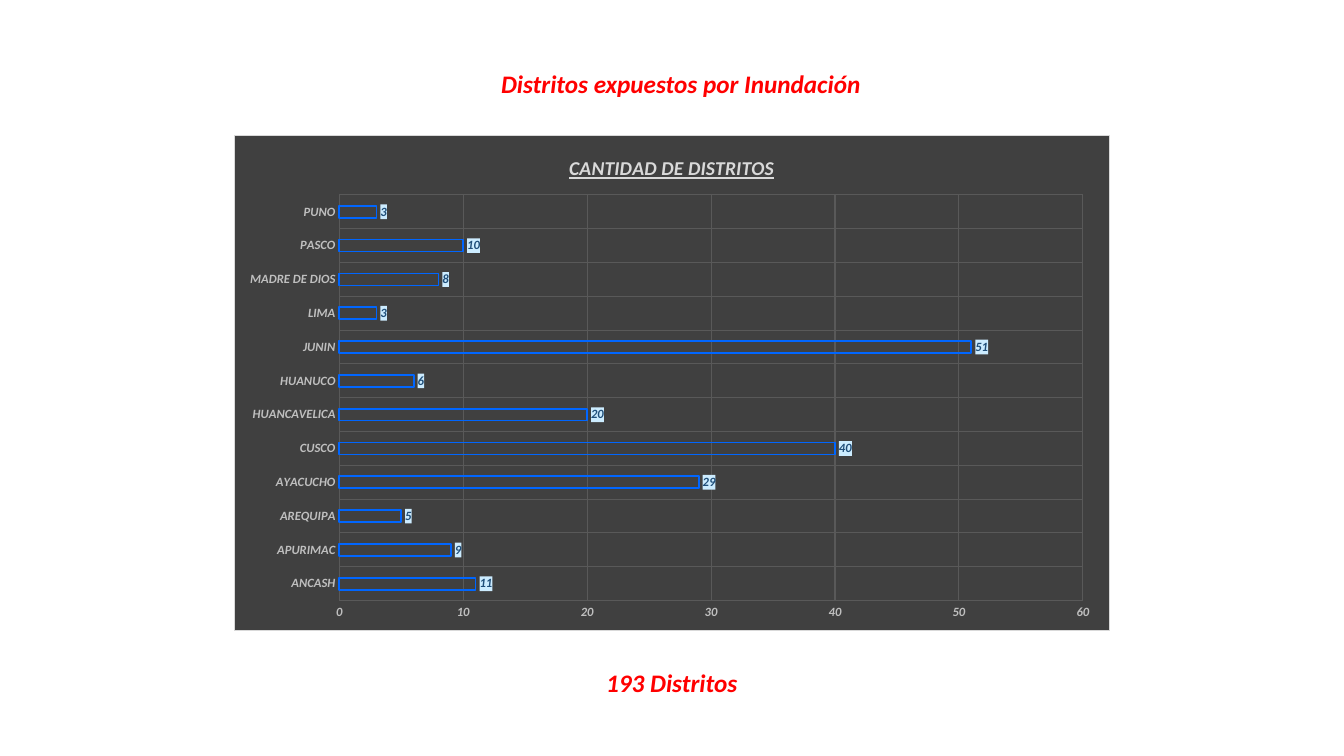
from lxml import etree
from pptx import Presentation
from pptx import util as u
from pptx.chart.data import CategoryChartData
from pptx.dml.color import RGBColor
from pptx.enum import chart as ch, text
from pptx.oxml.ns import qn

COLORS = {"heading": "FF0000", "panel": "404040", "grid": "595959", "border": "D9D9D9",
          "axis": "BFBFBF", "bar": "0066FF", "label": "1F4E79", "label_fill": "CCECFF"}

DISTRICTS = {"ANCASH": 11, "APURIMAC": 9, "AREQUIPA": 5, "AYACUCHO": 29, "CUSCO": 40,
             "HUANCAVELICA": 20, "HUANUCO": 6, "JUNIN": 51, "LIMA": 3,
             "MADRE DE DIOS": 8, "PASCO": 10, "PUNO": 3}


def set_values(target, values):
    for name, value in values.items():
        setattr(target, name, value)


class DistrictSlide:
    def __init__(self, deck):
        self.slide = deck.slides.add_slide(deck.slide_layouts[5])

    def style_font(self, font, size, color, **extra):
        set_values(font, {"name": "Calibri", "size": u.Pt(size), "bold": True,
                          "italic": True, **extra})
        font.color.rgb = RGBColor.from_string(COLORS[color])

    def style_line(self, line, color, width):
        line.color.rgb = RGBColor.from_string(COLORS[color])
        line.width = u.Pt(width)

    def add_caption(self, wording, left, top, width, holder=None):
        """Write a red caption in the given placeholder, or in a new text box."""
        place = {"left": u.Pt(left), "top": u.Pt(top), "width": u.Pt(width), "height": u.Pt(28.8)}
        if holder is None:
            holder = self.slide.shapes.add_textbox(*place.values())
        set_values(holder, place)
        frame = holder.text_frame
        frame.text = wording
        set_values(frame, {"word_wrap": False, "vertical_anchor": text.MSO_ANCHOR.TOP,
                           "auto_size": text.MSO_AUTO_SIZE.SHAPE_TO_FIT_TEXT})
        frame.paragraphs[0].alignment = text.PP_ALIGN.CENTER
        self.style_font(frame.paragraphs[0].runs[0].font, 18, "heading")

    def fill_before_text(self, element, color, border=None):
        """Put a fill and an optional border ahead of a chart element's txPr."""
        props = etree.Element(qn("c:spPr"))
        fill = etree.SubElement(props, qn("a:solidFill"))
        etree.SubElement(fill, qn("a:srgbClr"), val=COLORS[color])
        if border:
            line = etree.SubElement(props, qn("a:ln"), w=str(u.Pt(0.75)))
            edge = etree.SubElement(line, qn("a:solidFill"))
            etree.SubElement(edge, qn("a:srgbClr"), val=COLORS[border])
        element.find(qn("c:txPr")).addprevious(props)

    def place_plot(self, chart, **fractions):
        """Fix the inner plot area as fractions of the chart."""
        area = chart._chartSpace.chart.plotArea
        for old in area.findall(qn("c:layout")):
            area.remove(old)
        layout = etree.Element(qn("c:layout"))
        area.insert(0, layout)
        manual = etree.SubElement(layout, qn("c:manualLayout"))
        settings = {"layoutTarget": "inner", "xMode": "edge", "yMode": "edge", **fractions}
        for tag, value in settings.items():
            etree.SubElement(manual, qn(f"c:{tag}"), val=str(value))

    def style_axis(self, axis):
        set_values(axis, {"major_tick_mark": ch.XL_TICK_MARK.NONE,
                          "minor_tick_mark": ch.XL_TICK_MARK.NONE,
                          "has_major_gridlines": True})
        axis.format.line.fill.background()
        self.style_line(axis.major_gridlines.format.line, "grid", 0.75)
        self.style_font(axis.tick_labels.font, 9, "axis")

    def add_bars(self, title, values, left, top, width, height):
        data = CategoryChartData(number_format="#,##0")
        data.categories = list(values)
        data.add_series("Series 1", list(values.values()))
        chart = self.slide.shapes.add_chart(
            ch.XL_CHART_TYPE.BAR_CLUSTERED, u.Pt(left), u.Pt(top),
            u.Pt(width), u.Pt(height), data).chart
        set_values(chart, {"has_legend": False, "has_title": True})
        set_values(chart.font, {"name": "Calibri", "size": u.Pt(10)})
        self.fill_before_text(chart._chartSpace, "panel", "border")

        chart.chart_title.include_in_layout = False
        heading = chart.chart_title.text_frame
        heading.text = title
        self.style_font(heading.paragraphs[0].runs[0].font, 14, "border", underline=True)

        for axis in (chart.category_axis, chart.value_axis):
            self.style_axis(axis)
        set_values(chart.value_axis, {"minimum_scale": 0, "maximum_scale": 60, "major_unit": 10})

        plot = chart.plots[0]
        set_values(plot, {"gap_width": 182, "overlap": -50, "vary_by_categories": False})
        bars = plot.series[0]
        bars.invert_if_negative = False
        bars.format.fill.background()
        self.style_line(bars.format.line, "bar", 1.25)

        labels = bars.data_labels
        set_values(labels, {"show_value": True, "number_format": "#,##0",
                            "number_format_is_linked": False,
                            "position": ch.XL_LABEL_POSITION.OUTSIDE_END})
        self.style_font(labels.font, 9, "label")
        self.fill_before_text(labels._element, "label_fill")
        self.place_plot(chart, x=0.12, y=0.12, w=0.85, h=0.82)


def main():
    deck = Presentation()
    set_values(deck, {"slide_width": u.Pt(960), "slide_height": u.Pt(540)})
    flood = DistrictSlide(deck)
    flood.add_caption("Distritos expuestos por Inundación", 349.2, 45.4, 274.3,
                      flood.slide.shapes.title)
    flood.add_caption("193 Distritos", 425.5, 473, 108.7)
    flood.add_bars("CANTIDAD DE DISTRITOS", DISTRICTS, 167, 96.5, 625.7, 354.2)
    deck.save("out.pptx")


if __name__ == "__main__":
    main()
